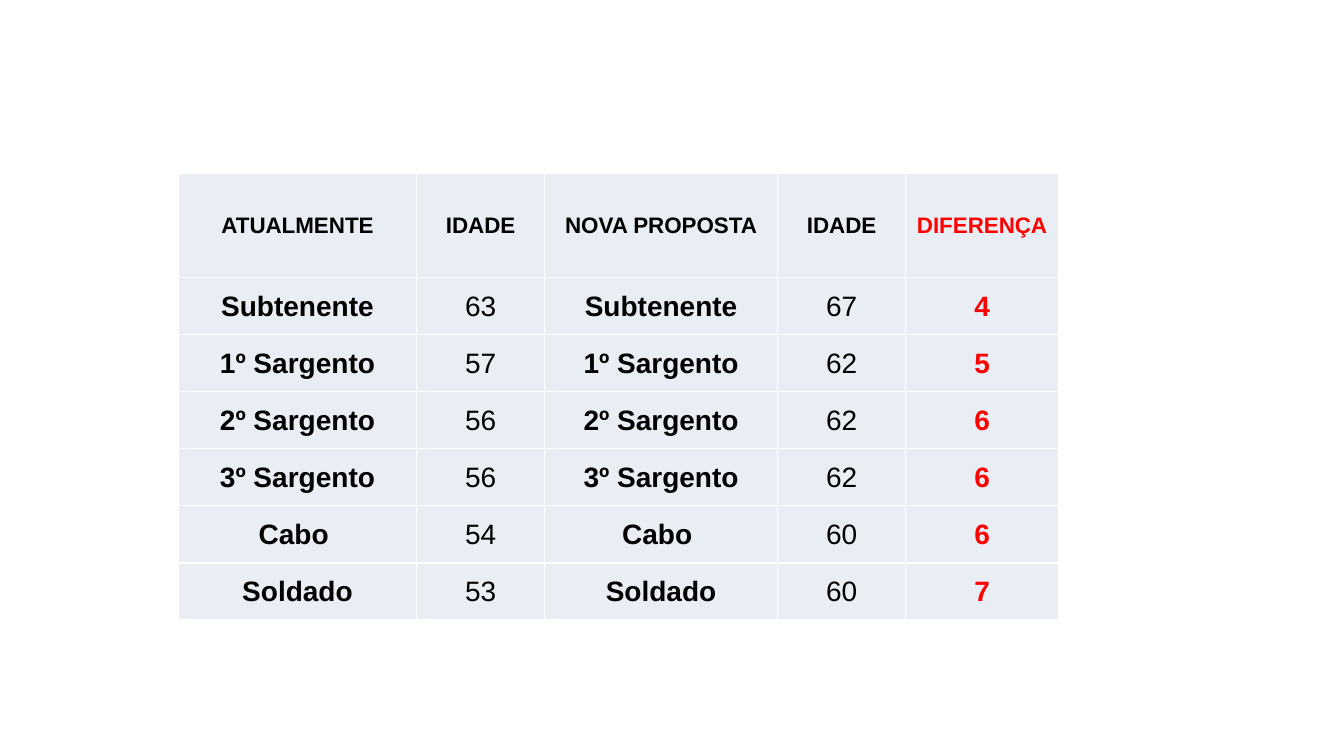
from pptx import Presentation
from pptx.dml.color import RGBColor
from pptx.enum.text import MSO_ANCHOR as Anchor, PP_ALIGN as Align
from pptx.oxml import parse_xml
from pptx.oxml.ns import nsdecls
from pptx.util import Pt

BLACK, RED, WHITE, PALE = "000000", "FF0000", "FFFFFF", "E9EDF4"

HEADINGS = ["ATUALMENTE", "IDADE", "NOVA PROPOSTA", "IDADE", "DIFERENÇA"]
RETIREMENT_AGES = [
    ("Subtenente", 63, 67),
    ("1º Sargento", 57, 62),
    ("2º Sargento", 56, 62),
    ("3º Sargento", 56, 62),
    ("Cabo ", 54, 60),
    ("Soldado", 53, 60),
]
COLUMN_WIDTHS = [169.9, 91.7, 166.2, 91.7, 109]
HEADING_HEIGHT, RANK_HEIGHT = 74.2, 40.8


def rgb(code):
    return RGBColor.from_string(code)


def write(frame, text, *, size, color=BLACK, bold=False, font="Arial", align=Align.CENTER):
    paragraph = frame.paragraphs[0]
    paragraph.alignment = align
    run = paragraph.add_run()
    run.text = text
    run.font.name = font
    run.font.size = Pt(size)
    run.font.bold = bold
    run.font.color.rgb = rgb(color)


class SlideBuilder:
    fill, border, border_width = PALE, WHITE, 1
    heading_size, body_size = 16, 20

    def __init__(self, slide):
        self.slide = slide

    def table(self, rows, left, top, widths, heights):
        grid = self.slide.shapes.add_table(
            len(rows), len(widths), Pt(left), Pt(top), Pt(sum(widths)), Pt(sum(heights))
        ).table
        for column, width in zip(grid.columns, widths):
            column.width = Pt(width)
        for row, height in zip(grid.rows, heights):
            row.height = Pt(height)
        for r, values in enumerate(rows):
            for c, value in enumerate(values):
                is_age = r > 0 and c in (1, 3)
                self.cell(
                    grid.cell(r, c),
                    str(value),
                    size=self.body_size if r else self.heading_size,
                    color=RED if c == len(widths) - 1 else BLACK,
                    bold=not is_age,
                )

    def cell(self, cell, text, **style):
        cell.fill.solid()
        cell.fill.fore_color.rgb = rgb(self.fill)
        cell.vertical_anchor = Anchor.MIDDLE
        cell.margin_left = cell.margin_right = cell.margin_top = Pt(0.75)
        cell.margin_bottom = Pt(0)
        self.borders(cell)
        write(cell.text_frame, text, **style)

    def borders(self, cell):
        properties = cell._tc.get_or_add_tcPr()
        for position, side in enumerate("LRTB"):
            properties.insert(position, parse_xml(
                f'<a:ln{side} {nsdecls("a")} w="{Pt(self.border_width)}">'
                f'<a:solidFill><a:srgbClr val="{self.border}"/></a:solidFill>'
                f'</a:ln{side}>'
            ))


def main():
    deck = Presentation()
    deck.slide_width, deck.slide_height = Pt(960), Pt(540)
    builder = SlideBuilder(deck.slides.add_slide(deck.slide_layouts[6]))
    ranks = [
        (rank, current, rank, proposed, proposed - current)
        for rank, current, proposed in RETIREMENT_AGES
    ]
    heights = [HEADING_HEIGHT] + [RANK_HEIGHT] * len(ranks)
    builder.table([HEADINGS] + ranks, 127.6, 124, COLUMN_WIDTHS, heights)
    deck.save("out.pptx")


if __name__ == "__main__":
    main()
